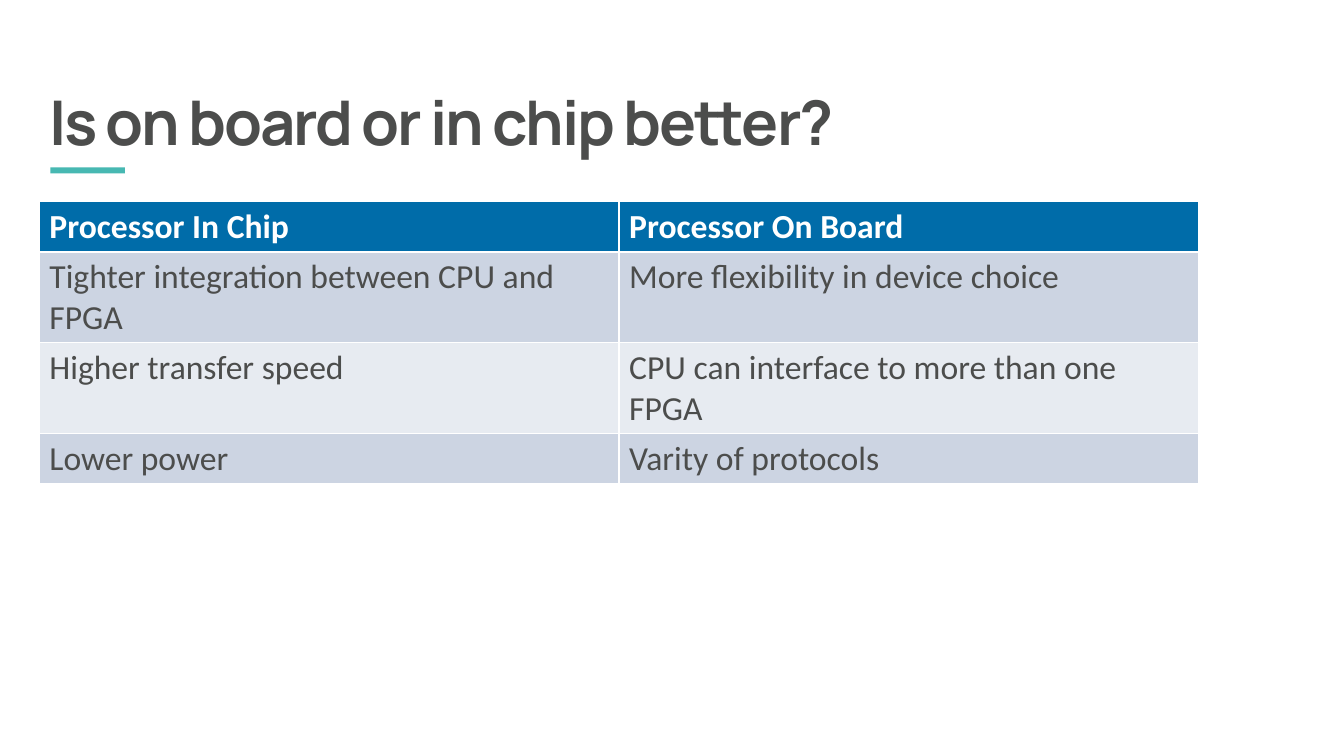
from pptx import Presentation
from pptx.dml.color import RGBColor
from pptx.enum.shapes import MSO_SHAPE
from pptx.enum.text import MSO_ANCHOR
from pptx.util import Inches, Pt

COLORS = {"ink": "4C4D4C", "white": "FFFFFF", "accent": "47B8B2",
          "header": "006CA9", "odd": "CCD4E2", "even": "E7EBF1"}
TITLE_FONT = {"name": "Manrope", "size": Pt(44), "bold": True}
HEADER_FONT = {"name": "Calibri", "size": Pt(24), "bold": True}
BODY_FONT = {**HEADER_FONT, "bold": False}
COMPARISON = [
    ("Processor In Chip", "Processor On Board"),
    ("Tighter integration between CPU and FPGA", "More flexibility in device choice"),
    ("Higher transfer speed", "CPU can interface to more than one FPGA"),
    ("Lower power", "Varity of protocols"),
]


def rgb(name):
    """Return the named colour."""
    return RGBColor.from_string(COLORS[name])


def write(para, text, values, color):
    """Add a formatted span to a paragraph and return it."""
    span = para.add_run()
    span.text = text
    for key, value in values.items():
        setattr(span.font, key, value)
    span.font.color.rgb = rgb(color)
    return span


def add_title(page, text, left, top, width, height):
    """Place the bottom-anchored title and the accent bar below it."""
    box = page.shapes.add_textbox(*map(Inches, (left, top, width, height)))
    frame = box.text_frame
    frame.word_wrap = True
    frame.vertical_anchor = MSO_ANCHOR.BOTTOM
    span = write(frame.paragraphs[0], text, TITLE_FONT, "ink")
    span.font._element.set("spc", "-150")

    bar = page.shapes.add_shape(
        MSO_SHAPE.RECTANGLE,
        *map(Inches, (left + 0.11, top + height + 0.05, 0.74, 0.06)))
    bar.shadow.inherit = False
    bar.fill.solid()
    bar.fill.fore_color.rgb = rgb("accent")
    bar.line.fill.background()


def add_comparison(page, rows, left, top, width, row_height):
    """Place the comparison table with a header and banded rows."""
    size = (left, top, width, row_height * len(rows))
    table = page.shapes.add_table(len(rows), len(rows[0]), *map(Inches, size)).table
    for index, texts in enumerate(rows):
        table.rows[index].height = Inches(row_height)
        band = "header" if index == 0 else "odd" if index % 2 else "even"
        values, color = (BODY_FONT, "ink") if index else (HEADER_FONT, "white")
        for column, text in enumerate(texts):
            cell = table.cell(index, column)
            cell.fill.solid()
            cell.fill.fore_color.rgb = rgb(band)
            write(cell.text_frame.paragraphs[0], text, values, color)


def main():
    """Build the deck and save it."""
    deck = Presentation()
    deck.slide_width, deck.slide_height = Inches(13.33), Inches(7.5)
    page = deck.slides.add_slide(deck.slide_layouts[6])
    add_title(page, "Is on board or in chip better?", 0.39, 0.06, 12.54, 1.55)
    add_comparison(page, COMPARISON, 0.39, 2, 11.5, 0.41)
    deck.save("out.pptx")


if __name__ == "__main__":
    main()
